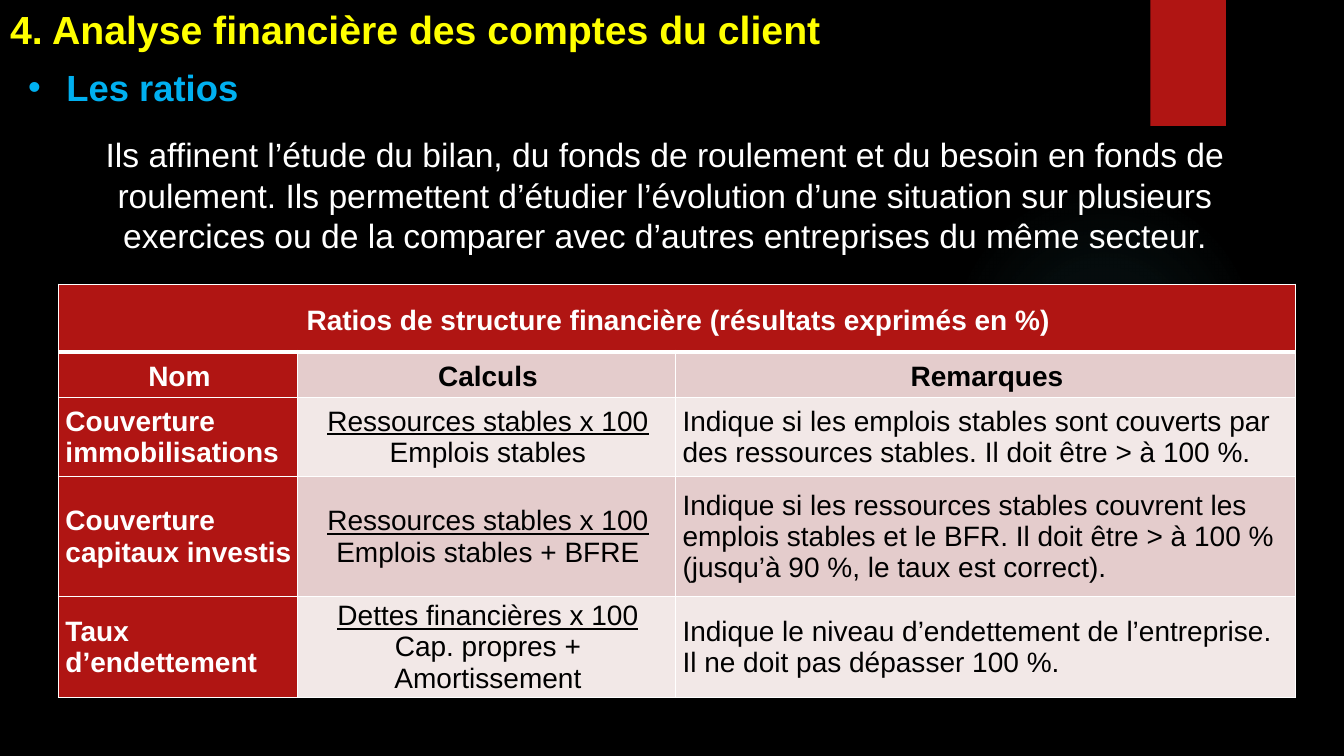
import pptx
import pptx.util
import pptx.dml.color
import pptx.enum.shapes
import pptx.enum.text
import pptx.oxml
import pptx.oxml.ns

Inches = pptx.util.Inches
Pt = pptx.util.Pt
RGBColor = pptx.dml.color.RGBColor
ALIGN = pptx.enum.text.PP_ALIGN
ANCHOR = pptx.enum.text.MSO_ANCHOR
SHAPE = pptx.enum.shapes.MSO_SHAPE

BLACK = RGBColor(0x00, 0x00, 0x00)
WHITE = RGBColor(0xFF, 0xFF, 0xFF)
RED = RGBColor(0xB0, 0x15, 0x13)
YELLOW = RGBColor(0xFF, 0xFF, 0x00)
BLUE = RGBColor(0x00, 0xB0, 0xF0)
TEAL = RGBColor(0x50, 0xB9, 0xC1)
ROSE = RGBColor(0xE4, 0xCC, 0xCC)
PALE = RGBColor(0xF2, 0xE8, 0xE7)

TITLE = "4. Analyse financière des comptes du client"
INTRO = ("Ils affinent l’étude du bilan, du fonds de roulement et du besoin en fonds de "
         "roulement. Ils permettent d’étudier l’évolution d’une situation sur plusieurs "
         "exercices ou de la comparer avec d’autres entreprises du même secteur.")
HEAD = "Ratios de structure financière (résultats exprimés en %)"
LABELS = ["Nom", "Calculs", "Remarques"]
RATIOS = [
    (["Couverture", "immobilisations"],
     ["Ressources stables x 100", "Emplois stables"],
     ["Indique si les emplois stables sont couverts par des ressources stables. "
      "Il doit être > à 100\u00a0%."]),
    (["Couverture", "capitaux investis"],
     ["Ressources stables x 100", "Emplois stables + BFRE"],
     ["Indique si les ressources stables couvrent les emplois stables et le BFR. "
      "Il doit être > à 100 % (jusqu’à 90 %, le taux est correct)."]),
    (["Taux", "d’endettement"],
     ["Dettes financières x 100", "Cap. propres + Amortissement"],
     ["Indique le niveau d’endettement de l’entreprise. "
      "Il ne doit pas dépasser 100 %."]),
]
COLS = [2.37, 3.75, 6.15]
ROWS = [0.67, 0.45, 0.79, 1.19, 1.0]


def style(para, size, color, bold=False, align=ALIGN.LEFT):
    """Set the font and alignment of a paragraph."""
    para.alignment = align
    font = para.font
    font.name = "Arial"
    font.size = Pt(size)
    font.bold = bold
    font.color.rgb = color


def add_xml(parent, tag, body, attrs=""):
    """Append a drawing element to a parent."""
    space = pptx.oxml.ns.nsdecls("a")
    node = pptx.oxml.parse_xml(f"<a:{tag} {space} {attrs}>{body}</a:{tag}>")
    parent.append(node)


def add_form(slide, kind, left, top, width, height):
    """Add a red preset shape with no line or shadow."""
    form = slide.shapes.add_shape(kind, Inches(left), Inches(top),
                                  Inches(width), Inches(height))
    form.shadow.inherit = False
    form.fill.solid()
    form.fill.fore_color.rgb = RED
    form.line.fill.background()
    return form


def add_glow(slide):
    """Add the faint round glow."""
    glow = add_form(slide, SHAPE.OVAL, 9.41, 1.83, 3.08, 3.08)
    stops = "".join(
        f'<a:gs pos="{pos * 1000}"><a:srgbClr val="{TEAL}">'
        f'<a:alpha val="{alpha * 1000}"/></a:srgbClr></a:gs>'
        for pos, alpha in [(0, 7), (36, 6), (69, 0)])
    props = glow._element.spPr
    fill = props.find(pptx.oxml.ns.qn("a:solidFill"))
    add_xml(props, "gradFill",
            f'<a:gsLst>{stops}</a:gsLst><a:path path="circle">'
            '<a:fillToRect l="50000" t="50000" r="50000" b="50000"/></a:path>')
    props.replace(fill, props[-1])


def add_title(slide):
    """Place and fill the title."""
    title = slide.shapes.title
    title.left, title.top = Inches(0), Inches(0)
    title.width, title.height = Inches(11.24), Inches(0.57)
    frame = title.text_frame
    frame.text = TITLE
    frame.auto_size = pptx.enum.text.MSO_AUTO_SIZE.NONE
    frame.vertical_anchor = ANCHOR.TOP
    style(frame.paragraphs[0], 28, YELLOW, True)


def add_intro(slide):
    """Add the bulleted heading and the text below it."""
    box = slide.shapes.add_textbox(Inches(0.18), Inches(0.6), Inches(12.43), Inches(2))
    frame = box.text_frame
    frame.word_wrap = True
    point = frame.paragraphs[0]
    point.text = "Les ratios"
    props = point._p.get_or_add_pPr()
    props.set("marL", str(Inches(0.38)))
    props.set("indent", str(Inches(-0.38)))
    add_xml(props, "buFont", "", 'typeface="Arial"')
    add_xml(props, "buChar", "", 'char="•"')
    style(point, 26, BLUE, True)
    point.space_after = Pt(6)
    para = frame.add_paragraph()
    para.text = INTRO
    para._p.get_or_add_pPr().set("marL", str(Inches(0.4)))
    style(para, 24, WHITE, align=ALIGN.CENTER)
    para.space_before = Pt(12)
    para.space_after = Pt(6)


def fill_cell(cell, lines, back, color, bold, align, ruled=False, base=1):
    """Fill a cell with its text, colour and white borders."""
    cell.margin_left, cell.margin_right = Inches(0.07), Inches(0.04)
    cell.margin_top = cell.margin_bottom = 0
    cell.vertical_anchor = ANCHOR.MIDDLE
    frame = cell.text_frame
    frame.text = "\n".join(lines)
    for para in frame.paragraphs:
        style(para, 20, color, bold, align)
    if ruled:
        frame.paragraphs[0].font.underline = True
    props = cell._tc.get_or_add_tcPr()
    for side in "LRTB":
        width = Pt(base if side == "B" else 1)
        add_xml(props, f"ln{side}",
                f'<a:solidFill><a:srgbClr val="{WHITE}"/></a:solidFill>', f'w="{width}"')
    cell.fill.solid()
    cell.fill.fore_color.rgb = back


def add_ratios(slide):
    """Add the table of ratios."""
    table = slide.shapes.add_table(len(ROWS), len(COLS), Inches(0.58), Inches(2.82),
                                   Inches(sum(COLS)), Inches(sum(ROWS))).table
    table.first_row = table.horz_banding = False
    for col, width in zip(table.columns, COLS):
        col.width = Inches(width)
    for row, height in zip(table.rows, ROWS):
        row.height = Inches(height)
    table.cell(0, 0).merge(table.cell(0, 2))
    for col, label in enumerate(LABELS):
        fill_cell(table.cell(0, col), [HEAD] if col == 0 else [], RED, WHITE, True,
                  ALIGN.CENTER, base=3)
        back, color = (ROSE, BLACK) if col else (RED, WHITE)
        fill_cell(table.cell(1, col), [label], back, color, True, ALIGN.CENTER)
    for row in range(2):
        for col in range(3):
            for para in table.cell(row, col).text_frame.paragraphs:
                para.line_spacing = 1.15
    for row, (name, ratio, note) in enumerate(RATIOS, 2):
        back = ROSE if row % 2 else PALE
        fill_cell(table.cell(row, 0), name, RED, WHITE, True, ALIGN.LEFT)
        fill_cell(table.cell(row, 1), ratio, back, BLACK, False, ALIGN.CENTER, True)
        fill_cell(table.cell(row, 2), note, back, BLACK, False, ALIGN.LEFT)


def main():
    """Build and save the slide."""
    deck = pptx.Presentation()
    deck.slide_width, deck.slide_height = Inches(13.33), Inches(7.5)
    slide = deck.slides.add_slide(deck.slide_layouts[5])
    slide.background.fill.solid()
    slide.background.fill.fore_color.rgb = BLACK
    add_glow(slide)
    add_form(slide, SHAPE.RECTANGLE, 11.41, 0, 0.75, 1.25)
    add_title(slide)
    add_intro(slide)
    add_ratios(slide)
    deck.save("out.pptx")


if __name__ == "__main__":
    main()
